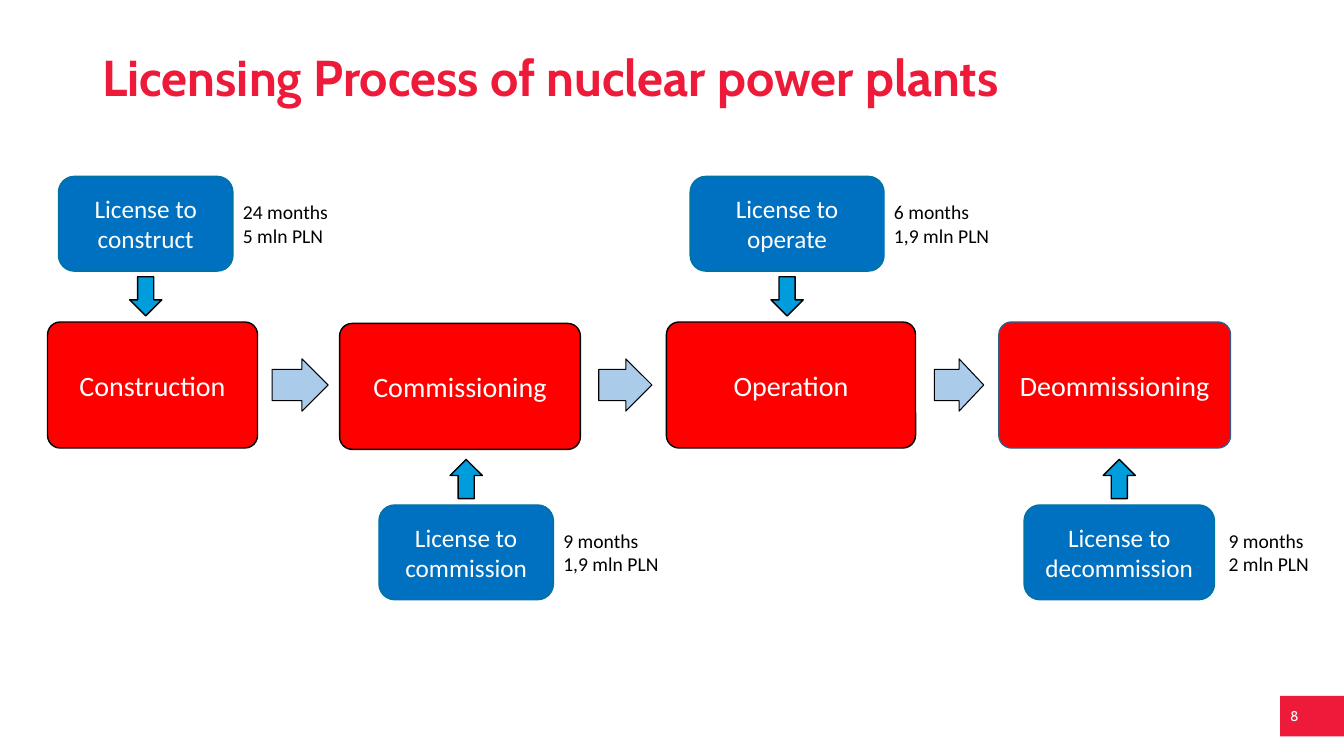
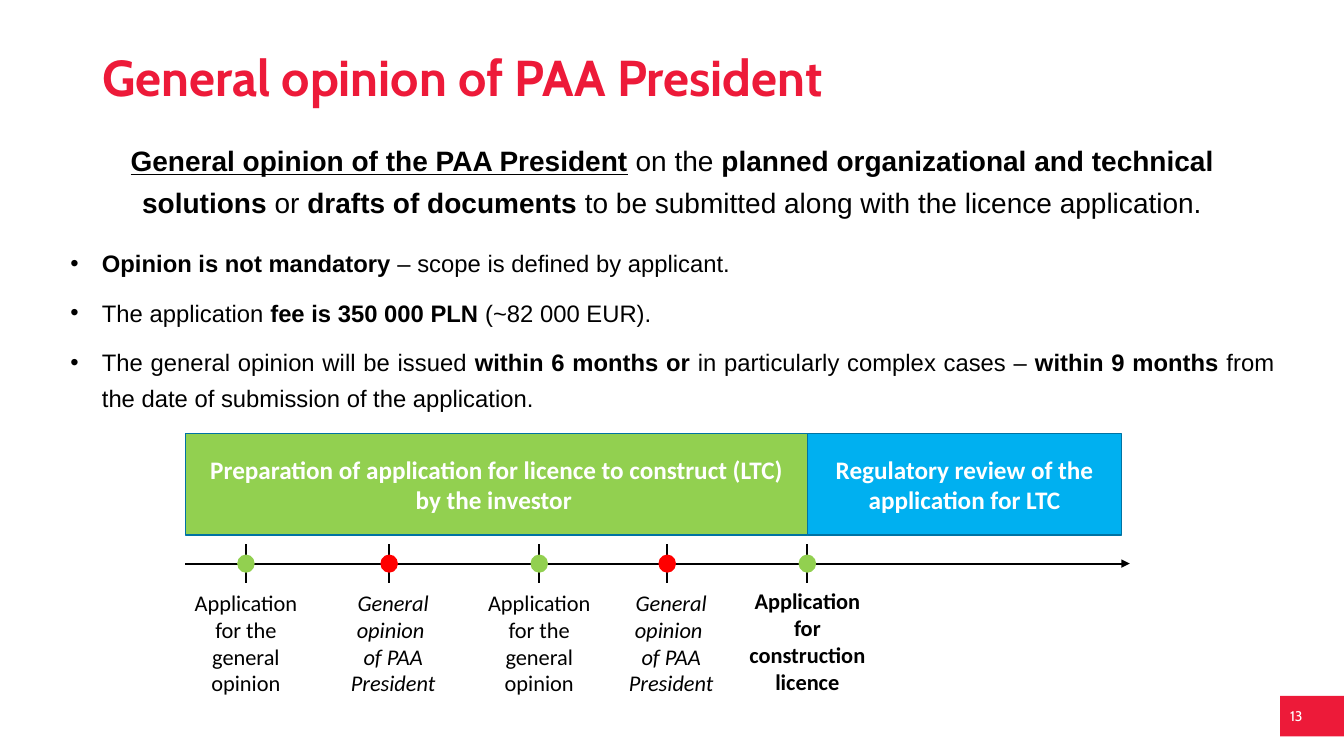
from lxml import etree
from pptx import Presentation
from pptx.dml.color import RGBColor
from pptx.enum import shapes, text
from pptx.oxml import ns
from pptx.util import Pt

COLORS = {
    "crimson": "ED1A39", "white": "FFFFFF", "black": "000000",
    "red": "FF0000", "navy": "32598A", "pale": "ABCBEB",
    "blue": "0070C0", "teal": "0073A3", "azure": "009CDC",
    "sky": "00B0F0", "green": "92D050",
}
SHAPE = shapes.MSO_SHAPE
ALIGN = text.PP_ALIGN
MIDDLE = text.MSO_ANCHOR.MIDDLE


def rgb(name):
    return RGBColor.from_string(COLORS[name])


def add_run(p, words, size, font="Calibri", color="black", bold=False,
            italic=False, underline=False):
    r = p.add_run()
    r.text = words
    f = r.font
    f.size, f.name, f.bold, f.italic = Pt(size), font, bold, italic
    f.underline = underline
    f.color.rgb = rgb(color)


def add_lines(tf, lines, align=ALIGN.LEFT, **style):
    tf.word_wrap = True
    for i, line in enumerate(lines):
        p = tf.add_paragraph() if i else tf.paragraphs[0]
        p.alignment = align
        for j, part in enumerate(line.split("\n")):
            if j:
                p.add_line_break()
            add_run(p, part, **style)


def add_box(s, kind, box, fill, line=None, weight=1, adj=()):
    sp = s.shapes.add_shape(kind, *map(Pt, box))
    sp.shadow.inherit = False
    sp.fill.solid()
    sp.fill.fore_color.rgb = rgb(fill)
    if line:
        sp.line.color.rgb = rgb(line)
        sp.line.width = Pt(weight)
    else:
        sp.line.fill.background()
    for i, value in enumerate(adj):
        sp.adjustments[i] = value
    sp.text_frame.vertical_anchor = MIDDLE
    return sp


def add_text(s, box, anchor=text.MSO_ANCHOR.TOP):
    tf = s.shapes.add_textbox(*map(Pt, box)).text_frame
    tf.word_wrap = True
    tf.vertical_anchor = anchor
    return tf


def add_line(s, x1, y1, x2, y2, arrow=False):
    c = s.shapes.add_connector(shapes.MSO_CONNECTOR.STRAIGHT,
                               Pt(x1), Pt(y1), Pt(x2), Pt(y2))
    c.line.color.rgb = rgb("black")
    c.line.width = Pt(1.5)
    if arrow:
        etree.SubElement(c.line._get_or_add_ln(), ns.qn("a:tailEnd"), type="triangle")
    etree.SubElement(c._element.spPr, ns.qn("a:effectLst"))


def new_slide(prs, title, number):
    s = prs.slides.add_slide(prs.slide_layouts[6])
    tf = add_text(s, (66, 29, 765, 57), MIDDLE)
    add_lines(tf, [title], size=36, font="Cabin", color="crimson", bold=True)
    tf.paragraphs[0].line_spacing = 0.9
    badge = add_box(s, SHAPE.RECTANGLE, (914.4, 497, 45.6, 29), "crimson")
    add_lines(badge.text_frame, [number], size=10, font="Cabin", color="white")
    return s


def add_stage(s, box, label, line):
    sp = add_box(s, SHAPE.ROUNDED_RECTANGLE, box, "red", line, adj=(0.1,))
    add_lines(sp.text_frame, [label], ALIGN.CENTER, size=20, color="white")


def add_licence(s, box, label, facts, above, gap):
    x, y, w, h = box
    sp = add_box(s, SHAPE.ROUNDED_RECTANGLE, box, "blue", "teal")
    add_lines(sp.text_frame, [label], ALIGN.CENTER, size=18, color="white")
    kind, top = (SHAPE.DOWN_ARROW, y + h + 4) if above else (SHAPE.UP_ARROW, y - 32.5)
    add_box(s, kind, (x + w / 2 - 11.5, top, 23, 28), "azure", "black")
    add_lines(add_text(s, (x + w + gap, y, 94, h), MIDDLE), facts, size=14)


def licensing_slide(prs):
    s = new_slide(prs, "Licensing Process of nuclear power plants", "8")
    stages = [
        ("Construction", 34, 230, 150, "black"),
        ("Commissioning", 242.6, 231, 172, "black"),
        ("Operation", 476, 230, 178, "black"),
        ("Deommissioning", 713.5, 230, 165.5, "navy"),
    ]
    for label, x, y, w, line in stages:
        add_stage(s, (x, y, w, 90), label, line)
    for x, w in ((194.4, 40), (427.7, 38), (667.4, 35.3)):
        add_box(s, SHAPE.RIGHT_ARROW, (x, 256.3, w, 37.4), "pale", "black",
                0.75, (0.6, 0.5))
    licences = [
        ("construct", 41.8, 124.6, True, 0, ["24 months", "5 mln PLN"]),
        ("operate", 493, 138.5, True, 0, ["6 months", "1,9 mln PLN"]),
        ("commission", 270.7, 124.6, False, 0, ["9 months", "1,9 mln PLN"]),
        ("decommission", 731.5, 136, False, 3, ["9 months", "2 mln PLN"]),
    ]
    for verb, x, w, above, gap, facts in licences:
        box = (x, 126 if above else 360.7, w, 67.7)
        add_licence(s, box, f"License to {verb}", facts, above, gap)


def add_opinion_text(s, box):
    tf = add_text(s, box)
    intro = tf.paragraphs[0]
    intro.alignment = ALIGN.CENTER
    intro.line_spacing = 1.25
    intro.space_after = Pt(6)
    add_run(intro, "General opinion of the PAA President", 20, "Arial",
            bold=True, underline=True)
    for words, bold in [
        (" on the ", False),
        ("planned organizational and technical solutions ", True),
        ("or ", False), ("drafts of documents ", True),
        ("to be submitted along with the licence application.", False),
    ]:
        add_run(intro, words, 20, "Arial", bold=bold)
    bullets = [
        [("Opinion is not mandatory ", True), ("– scope is defined by applicant.", False)],
        [("The application ", False), ("fee is 350 000 PLN", True),
         (" (~82 000 EUR).", False)],
        [("The general opinion will be issued ", False), ("within 6 months or", True),
         (" in particularly complex cases – ", False), ("within 9 months ", True),
         ("from the date of submission of the application.", False)],
    ]
    for runs in bullets:
        p = tf.add_paragraph()
        p.alignment = ALIGN.JUSTIFY
        p.line_spacing = 1.25
        p.space_before = Pt(10)
        pPr = p._p.get_or_add_pPr()
        pPr.set("marL", str(Pt(22.5)))
        pPr.set("indent", str(-Pt(22.5)))
        etree.SubElement(pPr, ns.qn("a:buFont"), typeface="Arial")
        etree.SubElement(pPr, ns.qn("a:buChar"), char="•")
        for words, bold in runs:
            add_run(p, words, 17, "Arial", bold=bold)


def add_phase(s, box, label, fill):
    sp = add_box(s, SHAPE.RECTANGLE, box, fill, "teal")
    add_lines(sp.text_frame, [label], ALIGN.CENTER, size=18, color="white", bold=True)


def add_milestone(s, x, y, label, color, width, shift=0, rise=0, **style):
    add_line(s, x, y - 14, x, y + 14)
    add_box(s, SHAPE.OVAL, (x - 5.75, y - 6, 11.5, 12), color, color)
    tf = add_text(s, (x + shift - width / 2, y + 14.5 - rise, width, 85))
    add_lines(tf, [label], ALIGN.CENTER, size=16, **style)


def add_timeline(s, x, y):
    add_phase(s, (x + 444.5, y, 224, 72.7),
              "Regulatory review of the application for LTC", "sky")
    add_phase(s, (x, y, 444.5, 72.7),
              "Preparation of application for licence to construct (LTC) by the investor ",
              "green")
    axis = y + 93
    add_line(s, x, axis, x + 674.5, axis, arrow=True)
    request = dict(label="Application for the general opinion", color="green", width=105)
    opinion = dict(label="General opinion \nof PAA President", color="red",
                   width=93, shift=2.8, italic=True)
    filing = dict(label="Application for construction licence", color="green",
                  width=106.6, rise=1, bold=True)
    offsets = (43.2, 145.5, 252.7, 344.1, 444.2)
    for dx, style in zip(offsets, (request, opinion, request, opinion, filing)):
        add_milestone(s, x + dx, axis, **style)


def opinion_slide(prs):
    s = new_slide(prs, "General opinion of PAA President", "13")
    add_opinion_text(s, (43.2, 93, 874, 404))
    add_timeline(s, 132.5, 309.6)


def main():
    prs = Presentation()
    prs.slide_width, prs.slide_height = Pt(960), Pt(540)
    licensing_slide(prs)
    opinion_slide(prs)
    prs.save("out.pptx")


if __name__ == "__main__":
    main()
